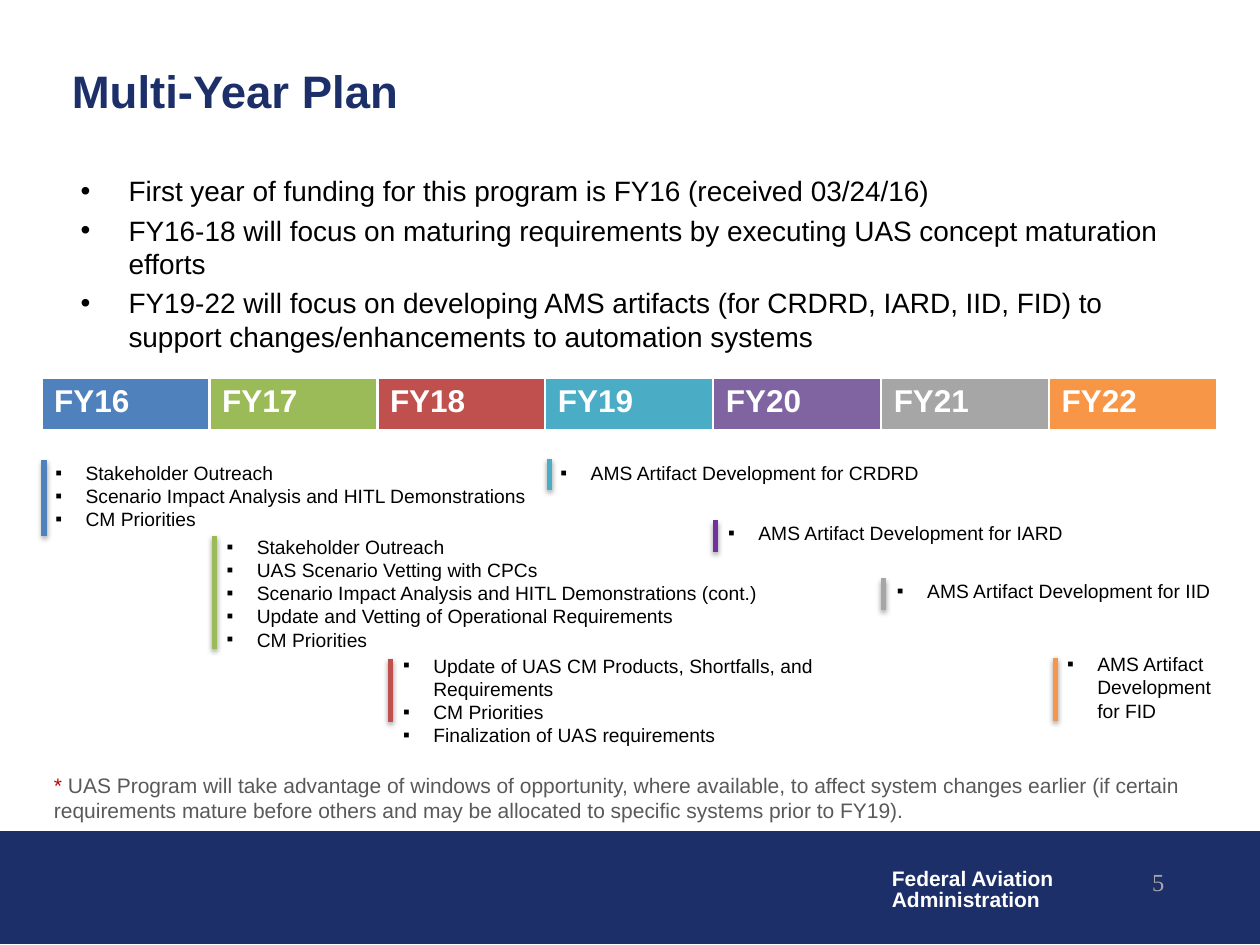
from lxml import etree
from pptx import Presentation
from pptx.dml.color import RGBColor
from pptx.enum import shapes, text
from pptx.oxml import parse_xml
from pptx.oxml.ns import nsdecls, qn
from pptx.util import Inches, Pt

NAVY = "1D2F68"


def style(font, size, color, bold=False, name="Arial"):
    font.size, font.bold, font.name = Pt(size), bold, name
    font.color.rgb = RGBColor.from_string(color)


def fill_list(frame, items, size, indent, bullet):
    """Write the items as bulleted paragraphs with a hanging indent."""
    frame.word_wrap = True
    frame.text = "\n".join(items)
    for para in frame.paragraphs:
        props = para._p.get_or_add_pPr()
        props.set("marL", str(Inches(indent)))
        props.set("indent", str(-Inches(indent)))
        etree.SubElement(props, qn("a:buFont")).set("typeface", "Arial")
        etree.SubElement(props, qn("a:buChar")).set("char", bullet)
        for span in para.runs:
            style(span.font, size, "000000")


deck = Presentation()
deck.slide_width, deck.slide_height = Inches(10), Inches(7.5)
page = deck.slides.add_slide(deck.slide_layouts[1])

# Footer band
band = page.shapes.add_shape(shapes.MSO_SHAPE.RECTANGLE,
                             Inches(0), Inches(6.6), Inches(10), Inches(0.89))
band.shadow.inherit = False
band.fill.solid()
band.fill.fore_color.rgb = RGBColor.from_string(NAVY)
band.line.color.rgb = RGBColor.from_string(NAVY)
band.line.width = Pt(0.75)

agency = page.shapes.add_textbox(Inches(6.98), Inches(6.85), Inches(1.5), Inches(0.44))
agency.text_frame.word_wrap = False
agency.text_frame.text = "Federal Aviation\nAdministration"
for para in agency.text_frame.paragraphs:
    para.line_spacing = 0.85
    style(para.runs[0].font, 12, "FFFFFF", bold=True)

number = page.shapes.add_textbox(Inches(7.26), Inches(6.83), Inches(2.08), Inches(0.5))
number.text_frame.word_wrap = True
number.text_frame.text = "5"
para = number.text_frame.paragraphs[0]
para.alignment = text.PP_ALIGN.RIGHT
style(para.runs[0].font, 14, "A6A6A6", name="Times New Roman")

# Title and main points
title = page.shapes.title
title.left, title.top, title.width, title.height = (
    Inches(0.47), Inches(0.38), Inches(9.27), Inches(0.67))
title.text_frame.text = "Multi-Year Plan"
title.text_frame.auto_size = text.MSO_AUTO_SIZE.NONE
title.text_frame.vertical_anchor = text.MSO_ANCHOR.MIDDLE
para = title.text_frame.paragraphs[0]
para.alignment = text.PP_ALIGN.LEFT
style(para.runs[0].font, 26, NAVY, bold=True)

body = page.placeholders[1]
body.left, body.top, body.width, body.height = (
    Inches(0.54), Inches(1.33), Inches(8.91), Inches(4.8))
body.text_frame.auto_size = text.MSO_AUTO_SIZE.NONE
fill_list(body.text_frame, [
    "First year of funding for this program is FY16 (received 03/24/16)",
    "FY16-18 will focus on maturing requirements by executing UAS concept maturation efforts",
    "FY19-22 will focus on developing AMS artifacts (for CRDRD, IARD, IID, FID) to "
    "support changes/enhancements to automation systems",
], 16, 0.38, "•")
for i, para in enumerate(body.text_frame.paragraphs):
    para.space_before = Pt(3.2 if i else 0)

# Fiscal year header
year_colors = ["4F81BD", "9BBB59", "C0504D", "4BACC6", "8064A2", "A6A6A6", "F79646"]
frame = page.shapes.add_table(1, len(year_colors), Inches(0.33), Inches(3),
                              Inches(9.33), Inches(0.41))
years = frame.table
years.horz_banding = False
for i, color in enumerate(year_colors):
    cell = years.cell(0, i)
    cell.text = f"FY{16 + i}"
    style(cell.text_frame.paragraphs[0].runs[0].font, 18, "FFFFFF", bold=True)
    props = cell._tc.get_or_add_tcPr()
    for side in ("lnL", "lnR", "lnT", "lnB"):
        props.append(parse_xml(
            f'<a:{side} {nsdecls("a")} w="{Pt(1.5)}"><a:solidFill>'
            f'<a:srgbClr val="FFFFFF"/></a:solidFill></a:{side}>'))
    cell.fill.solid()
    cell.fill.fore_color.rgb = RGBColor.from_string(color)

# Activities: box left, top, width, height; marker x, top, bottom, color; items
activities = [
    (0.34, 3.61, 4.19, 0.66, 0.35, 3.65, 4.25, "4F81BD",
     ["Stakeholder Outreach", "Scenario Impact Analysis and HITL Demonstrations",
      "CM Priorities"]),
    (1.7, 4.2, 5.13, 1.03, 1.7, 4.25, 5.15, "9BBB59",
     ["Stakeholder Outreach", "UAS Scenario Vetting with CPCs",
      "Scenario Impact Analysis and HITL Demonstrations (cont.)",
      "Update and Vetting of Operational Requirements", "CM Priorities"]),
    (3.1, 5.14, 4.45, 0.66, 3.1, 5.23, 5.73, "C0504D",
     ["Update of UAS CM Products, Shortfalls, and Requirements", "CM Priorities",
      "Finalization of UAS requirements"]),
    (4.35, 3.61, 4.93, 0.29, 4.36, 3.64, 3.89, "4BACC6",
     ["AMS Artifact Development for CRDRD"]),
    (5.68, 4.09, 4.28, 0.29, 5.68, 4.13, 4.38, "7030A0",
     ["AMS Artifact Development for IARD"]),
    (7.02, 4.55, 2.81, 0.29, 7.01, 4.59, 4.84, "A6A6A6",
     ["AMS Artifact Development for IID"]),
    (8.37, 5.13, 1.39, 0.66, 8.38, 5.22, 5.72, "F79646",
     ["AMS Artifact Development for FID"]),
]
for left, top, width, height, x, start, end, color, items in activities:
    box = page.shapes.add_textbox(Inches(left), Inches(top), Inches(width), Inches(height))
    fill_list(box.text_frame, items, 11, 0.24, "▪")
    marker = page.shapes.add_connector(shapes.MSO_CONNECTOR.STRAIGHT, Inches(x),
                                       Inches(start), Inches(x), Inches(end))
    marker.line.color.rgb = RGBColor.from_string(color)
    marker.line.width = Pt(3)
    marker._element.spPr.append(parse_xml(
        f'<a:effectLst {nsdecls("a")}><a:outerShdw blurRad="{Pt(3.1)}" dist="{Pt(1.6)}" '
        'dir="5400000" rotWithShape="0"><a:srgbClr val="000000"><a:alpha val="38000"/>'
        '</a:srgbClr></a:outerShdw></a:effectLst>'))

# Footnote
note = page.shapes.add_textbox(Inches(0.33), Inches(6.08), Inches(9.33), Inches(0.5))
note.text_frame.word_wrap = True
para = note.text_frame.paragraphs[0]
for words, color in [
    ("*", "C00000"),
    (" UAS Program will take advantage of windows of opportunity, where available, to "
     "affect system changes earlier (if certain requirements mature before others and "
     "may be allocated to specific systems prior to FY19).", "595959"),
]:
    span = para.add_run()
    span.text = words
    style(span.font, 12, color)

deck.save("out.pptx")
